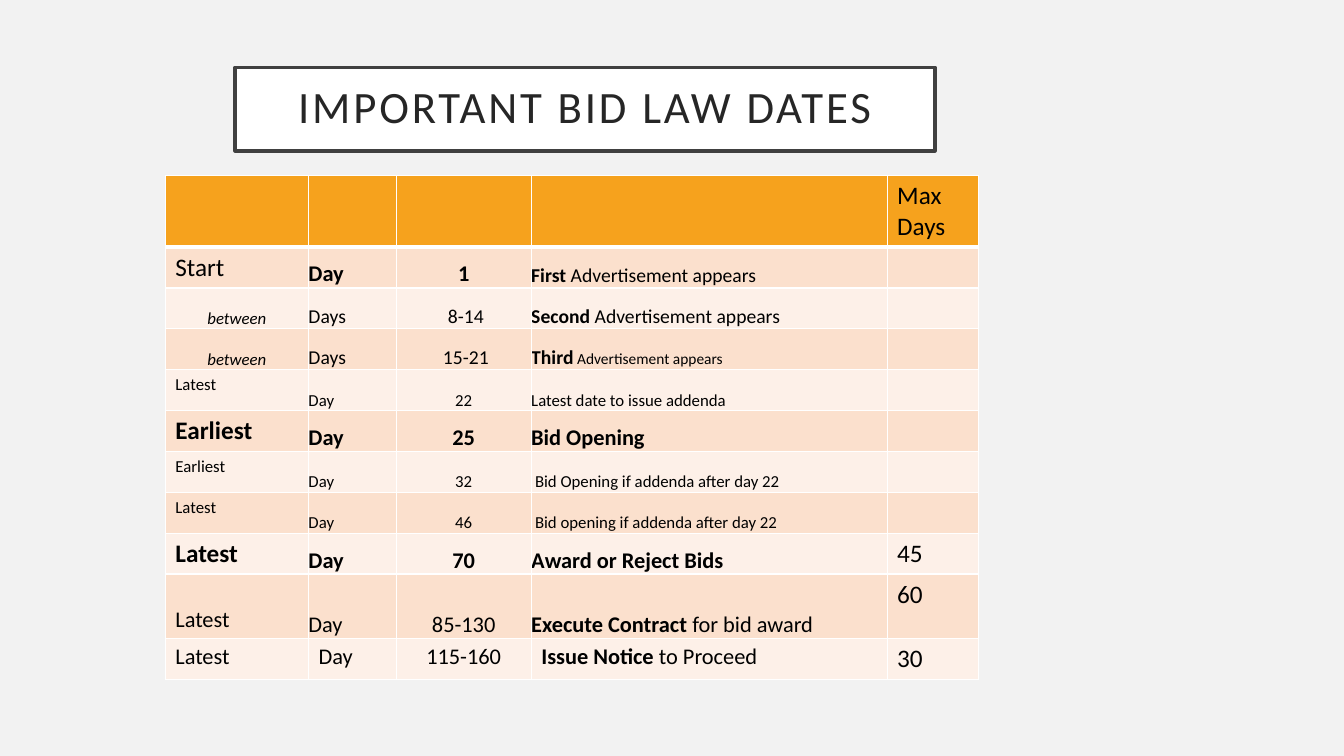
from lxml import etree
from pptx import Presentation
from pptx.dml.color import RGBColor
from pptx.enum.text import MSO_ANCHOR, MSO_AUTO_SIZE, PP_ALIGN
from pptx.oxml.ns import qn
from pptx.util import Inches, Pt

TOP, MIDDLE, BOTTOM = MSO_ANCHOR.TOP, MSO_ANCHOR.MIDDLE, MSO_ANCHOR.BOTTOM
LEFT, CENTER = PP_ALIGN.LEFT, PP_ALIGN.CENTER
NO_FIT = MSO_AUTO_SIZE.NONE
TITLE_ONLY = 5

FONT = "Calibri"
SLIDE_WIDTH, SLIDE_HEIGHT = Inches(13.33), Inches(7.5)
COLORS = {
    "page": "F2F2F2", "white": "FFFFFF", "frame": "404040", "title": "262626",
    "text": "000000", "header": "F6A21D", "odd": "FBE0CD", "even": "FDF0E8",
}

# Column weights and row heights (percent of the slide height)
COLUMNS = [142, 87, 134, 353, 91]
HEADER_ROW, PLAIN_ROW, TALL_ROW = 9.2, 5.33, 8.53

# Label, label size, label style, day, number, event spans, size, bold, max days
# An event span is its text, its size and whether it is bold.
STEPS = [
    ("Start", 18, "", "Day", "1",
     [("First ", 14, True), ("Advertisement appears", 14, False)], 16, True, ""),
    ("between", 12, "italic", "Days", " 8-14",
     [("Second ", 14, True), ("Advertisement appears", 14, False)], 14, False, ""),
    ("between", 12, "italic", "Days", " 15-21",
     [("Third", 14, True), (" Advertisement appears", 11, False)], 14, False, ""),
    ("Latest", 12, "", "Day", "22",
     [("Latest date to issue addenda", 12, False)], 12, False, ""),
    ("Earliest", 18, "bold", "Day", "25",
     [("Bid Opening", 16, True)], 16, True, ""),
    ("Earliest", 12, "", "Day", "32",
     [(" Bid Opening if addenda after day 22", 12, False)], 12, False, ""),
    ("Latest", 12, "", "Day", "46",
     [(" Bid opening if addenda after day 22", 12, False)], 12, False, ""),
    ("Latest", 18, "bold", "Day", "70",
     [("Award or Reject Bids", 16, True)], 16, True, "45"),
    ("Latest", 16, "", "Day", "85-130",
     [("Execute Contract ", 16, True), ("for bid award", 16, False)], 16, False, "60"),
    ("Latest", 16, "", "Day", "115-160",
     [("Issue Notice ", 16, True), ("to Proceed", 16, False)], 16, False, "30"),
]
EXECUTE, LAST = 9, len(STEPS)


def across(percent):
    return round(SLIDE_WIDTH * percent / 100)


def down(percent):
    return round(SLIDE_HEIGHT * percent / 100)


def rgb(name):
    return RGBColor.from_string(COLORS[name])


def add_text(para, text, size=18, bold=False, italic=False, color="text"):
    span = para.add_run()
    span.text = text
    font = span.font
    font.name, font.size = FONT, Pt(size)
    font.bold, font.italic = bold, italic
    font.color.rgb = rgb(color)
    return span


def set_borders(cell, bottom=1):
    properties = cell._tc.get_or_add_tcPr()
    for tag, width in (("lnL", 1), ("lnR", 1), ("lnT", 1), ("lnB", bottom)):
        line = etree.SubElement(properties, qn(f"a:{tag}"), w=str(Pt(width)))
        fill = etree.SubElement(line, qn("a:solidFill"))
        etree.SubElement(fill, qn("a:srgbClr"), val=COLORS["white"])


def fill_cell(cell, spans, fill, align=LEFT, anchor=TOP, tight=False, bottom=1):
    """Each span is a text with its format."""
    set_borders(cell, bottom)
    cell.fill.solid()
    cell.fill.fore_color.rgb = rgb(fill)
    cell.vertical_anchor = anchor
    if tight:
        cell.margin_left = cell.margin_right = 0
        cell.margin_top = cell.margin_bottom = 0
    para = cell.text_frame.paragraphs[0]
    para.alignment = align
    for text, style in spans:
        if text:
            add_text(para, text, **style)


def add_title(page, text):
    box = page.shapes.title
    box.left, box.top = across(17.5), down(8.9)
    box.width, box.height = across(52.06), down(11.07)
    box.fill.solid()
    box.fill.fore_color.rgb = rgb("white")
    box.line.color.rgb = rgb("frame")
    box.line.width = Pt(2.5)
    frame = box.text_frame
    frame.word_wrap, frame.auto_size = True, NO_FIT
    frame.vertical_anchor = MIDDLE
    frame.margin_left = frame.margin_right = Inches(0.2)
    frame.margin_top = frame.margin_bottom = Inches(0.2)
    para = frame.paragraphs[0]
    para.alignment, para.line_spacing = CENTER, 0.9
    span = add_text(para, text, size=32, color="title")
    span.font._element.set("spc", "200")


def add_step(table, number, step):
    label, label_size, label_style, day, days, event, size, bold, limit = step
    fill = "odd" if number % 2 else "even"
    tight = number != LAST
    anchor = BOTTOM if tight else TOP
    italic = label_style == "italic"
    style = {"size": size, "bold": bold}

    # Label and maximum keep the usual margins, except for the ranges
    fill_cell(table.cell(number, 0),
              [(label, {"size": label_size, "bold": label_style == "bold",
                        "italic": italic})],
              fill, align=CENTER if italic else LEFT, tight=italic,
              anchor=BOTTOM if italic or number == EXECUTE else TOP)
    fill_cell(table.cell(number, 4), [(limit, {})], fill)

    # Day, day number and event
    spans = [(text, {"size": points, "bold": strong}) for text, points, strong in event]
    middle = (([(day, style)], LEFT), ([(days, style)], CENTER), (spans, LEFT))
    for column, (content, align) in enumerate(middle, start=1):
        fill_cell(table.cell(number, column), content, fill, align, anchor, tight)


def add_dates(page):
    heights = [HEADER_ROW] + [PLAIN_ROW] * len(STEPS)
    heights[EXECUTE] = TALL_ROW
    width = across(60.54)
    table = page.shapes.add_table(len(heights), len(COLUMNS), across(12.3), down(23.2),
                                  width, down(sum(heights))).table
    table.first_row = table.horz_banding = False
    for column, weight in zip(table.columns, COLUMNS):
        column.width = round(width * weight / sum(COLUMNS))
    for row, height in zip(table.rows, heights):
        row.height = down(height)

    # Header
    for column, text in enumerate(["", "", "", "", "Max Days"]):
        fill_cell(table.cell(0, column), [(text, {})], "header", bottom=3)

    # Steps
    for number, step in enumerate(STEPS, start=1):
        add_step(table, number, step)


def main():
    deck = Presentation()
    deck.slide_width, deck.slide_height = SLIDE_WIDTH, SLIDE_HEIGHT
    page = deck.slides.add_slide(deck.slide_layouts[TITLE_ONLY])
    page.background.fill.solid()
    page.background.fill.fore_color.rgb = rgb("page")
    add_title(page, "IMPORTANT BID LAW DATES")
    add_dates(page)
    deck.save("out.pptx")


if __name__ == "__main__":
    main()
